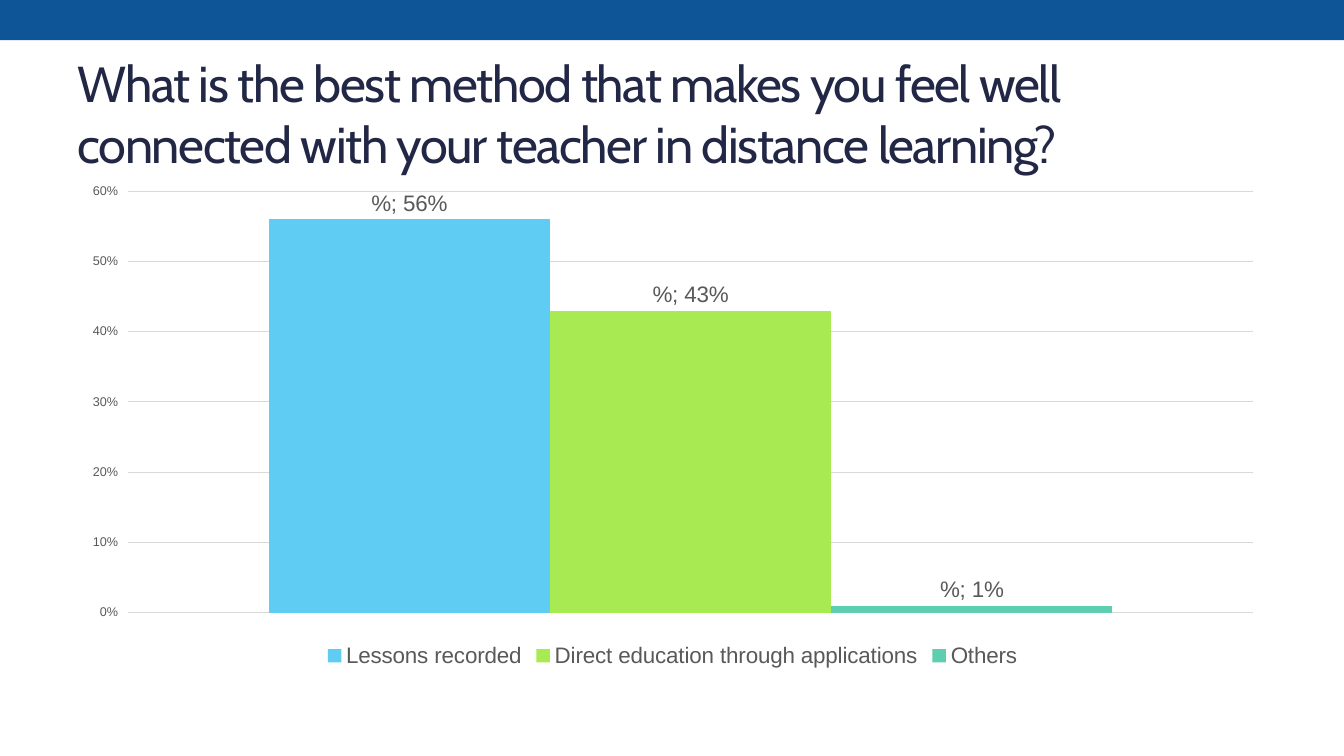
"""Build a survey slide with a title and a clustered column chart."""
from lxml.etree import SubElement
from pptx import Presentation
from pptx.chart.data import CategoryChartData
from pptx.dml.color import RGBColor
from pptx.enum.chart import XL_CHART_TYPE as CT, XL_LABEL_POSITION as LP
from pptx.enum.chart import XL_LEGEND_POSITION as LEG, XL_TICK_LABEL_POSITION as TLP
from pptx.enum.chart import XL_TICK_MARK as TM
from pptx.enum.shapes import MSO_SHAPE
from pptx.enum.text import MSO_ANCHOR, MSO_AUTO_SIZE, PP_ALIGN
from pptx.oxml import parse_xml
from pptx.oxml.ns import nsdecls, qn
from pptx.util import Inches, Pt


def rgb(value):
    return RGBColor.from_string(value)


def style(font, size, color="595959", name="Arial"):
    font.size, font.name, font.bold = Pt(size), name, False
    font.color.rgb = rgb(color)


prs = Presentation()
prs.slide_width, prs.slide_height = Inches(13.33), Inches(7.5)
s = prs.slides.add_slide(prs.slide_layouts[5])

band = s.shapes.add_shape(MSO_SHAPE.RECTANGLE, 0, 0, prs.slide_width, Inches(0.4))
band.shadow.inherit = False
band.fill.solid()
band.fill.fore_color.rgb = rgb("0D5596")
band.line.fill.background()

title = s.shapes.title
title.left, title.top = Inches(0.67), Inches(0.58)
title.width, title.height = Inches(12), Inches(1.08)
tf = title.text_frame
tf.word_wrap = True
tf.auto_size = MSO_AUTO_SIZE.NONE
tf.vertical_anchor = MSO_ANCHOR.MIDDLE
p = tf.paragraphs[0]
p.alignment = PP_ALIGN.LEFT
r = p.add_run()
r.text = ("What is the best method that makes you feel well "
          "connected with your teacher in distance learning?")
style(r.font, 36, "212745", "Cabin")
r.font._element.set("spc", "-100")

answers = [
    ("Lessons recorded", 0.56, "5ECCF3"),
    ("Direct education through applications", 0.43, "A7EA52"),
    ("Others", 0.01, "5DCEAF"),
]
data = CategoryChartData(number_format="0%")
data.categories = ["%"]
for name, share, color in answers:
    data.add_series(name, [share])
chart = s.shapes.add_chart(CT.COLUMN_CLUSTERED, Inches(0.67), Inches(1.75),
                           Inches(12), Inches(4.92), data).chart
style(chart.font, 10, "000000")
chart.has_title = False
chart.has_legend = True
chart.legend.position = LEG.BOTTOM
chart.legend.include_in_layout = False
style(chart.legend.font, 16)

cat = chart.category_axis
cat.tick_label_position = TLP.NONE
cat.major_tick_mark = TM.NONE
cat.format.line.color.rgb = rgb("D9D9D9")
val = chart.value_axis
val.minimum_scale, val.maximum_scale, val.major_unit = 0, 0.6, 0.1
val.major_tick_mark = TM.OUTSIDE
val.format.line.fill.background()
val.major_gridlines.format.line.color.rgb = rgb("D9D9D9")
val.major_gridlines.format.line.width = Pt(0.75)
val.tick_labels.number_format = "0%"
val.tick_labels.number_format_is_linked = False
style(val.tick_labels.font, 9)

plot = chart.plots[0]
plot.gap_width, plot.overlap = 100, 0
plot.vary_by_categories = False
for series, (name, share, color) in zip(plot.series, answers):
    series.format.fill.solid()
    series.format.fill.fore_color.rgb = rgb(color)
    labels = series.data_labels
    labels.show_value = labels.show_category_name = True
    labels.number_format = "0%"
    labels.number_format_is_linked = False
    labels.position = LP.OUTSIDE_END
    style(labels.font, 16)
    separator = SubElement(labels._element, qn("c:separator"))
    separator.text = "; "
    labels._element.find(qn("c:showBubbleSize")).addnext(separator)

area = chart._chartSpace.chart.plotArea
for old in area.findall(qn("c:layout")):
    area.remove(old)
area.insert(0, parse_xml(
    f'<c:layout {nsdecls("c")}><c:manualLayout><c:layoutTarget val="inner"/>'
    '<c:xMode val="edge"/><c:yMode val="edge"/><c:x val="0.05"/><c:y val="0.03"/>'
    '<c:w val="0.93"/><c:h val="0.85"/></c:manualLayout></c:layout>'))

prs.save("out.pptx")
